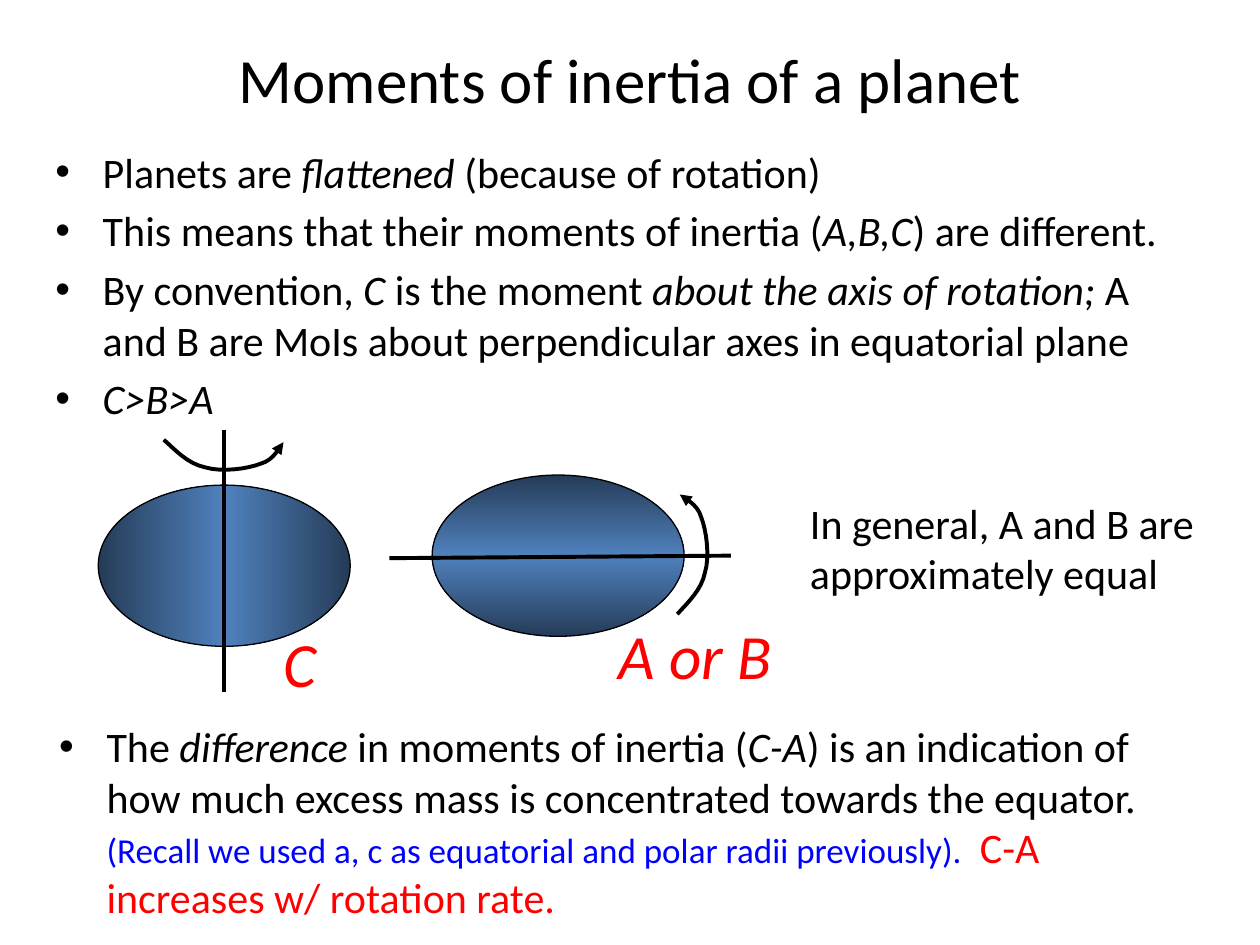
from copy import deepcopy
from dataclasses import dataclass

from lxml import etree
from pptx import Presentation
from pptx.dml.color import RGBColor
from pptx.enum import shapes, text
from pptx.oxml.ns import qn
from pptx.util import Inches, Pt


@dataclass(frozen=True)
class Theme:
    font: str = "Calibri"
    black: RGBColor = RGBColor(0, 0, 0)
    red: RGBColor = RGBColor(0xFF, 0, 0)
    blue: RGBColor = RGBColor(0, 0, 0xFF)
    planet_edge: RGBColor = RGBColor(0x25, 0x3C, 0x58)
    planet_middle: RGBColor = RGBColor(0x4F, 0x81, 0xBD)
    large: Pt = Pt(36)
    body: Pt = Pt(24)
    small: Pt = Pt(20)
    outline: Pt = Pt(0.75)
    axis: Pt = Pt(2.25)


THEME = Theme()
ITALIC = {"italic": True}
PLANET_SIZE = (2, 1.28)

BULLETS = [
    [("Planets are ", {}), ("flattened", ITALIC), (" (because of rotation)", {})],
    [("This means that their moments of inertia (", {}), ("A,B,C", ITALIC),
     (") are different.", {})],
    [("By convention, ", {}), ("C ", ITALIC), ("is the moment ", {}),
     ("about the axis of rotation;", ITALIC),
     (" A and B are MoIs about perpendicular axes in equatorial plane", {})],
    [("C>B>A", ITALIC)],
]
CONCLUSION = [
    [("The ", {}), ("difference", ITALIC), (" in moments of inertia (", {}),
     ("C-A", ITALIC),
     (") is an indication of how much excess mass is concentrated"
      " towards the equator.  ", {}),
     ("(Recall we used a, c as equatorial and polar radii previously). ",
      {"size": THEME.small, "color": THEME.blue}),
     (" ", {}),
     ("C-A increases w/ rotation rate.", {"color": THEME.red})],
]

# Cubic curves of the rotation arrow, in inches from its top left corner
ARROW_CURVES = [
    [(0, 0), (0.1, 0.09), (0.19, 0.19), (0.33, 0.22)],
    [(0.33, 0.22), (0.46, 0.26), (0.67, 0.23), (0.77, 0.19)],
    [(0.77, 0.19), (0.88, 0.16), (0.92, 0.05), (0.95, 0.02)],
]


def place(shape, left, top, width, height):
    shape.left, shape.top = Inches(left), Inches(top)
    shape.width, shape.height = Inches(width), Inches(height)


def style_font(font, size, color, italic=None):
    font.name, font.size, font.italic = THEME.font, size, italic
    font.color.rgb = color


def fill_title(title, words, box):
    place(title, *box)
    title.text_frame.text = words
    style_font(title.text_frame.paragraphs[0].font, THEME.large, THEME.black)


def fill_bullets(placeholder, paragraphs, box):
    """Write lists of (words, run format) pairs as bulleted paragraphs."""
    place(placeholder, *box)
    frame = placeholder.text_frame
    frame.auto_size = text.MSO_AUTO_SIZE.NONE
    for index, runs in enumerate(paragraphs):
        paragraph = frame.add_paragraph() if index else frame.paragraphs[0]
        for words, style in runs:
            run = paragraph.add_run()
            run.text = words
            style_font(run.font, **{"size": THEME.body, "color": THEME.black, **style})


def add_label(slide, words, box, size, color, italic=None, wrap=False):
    label = slide.shapes.add_textbox(*map(Inches, box))
    label.text_frame.word_wrap = wrap
    label.text_frame.auto_size = text.MSO_AUTO_SIZE.SHAPE_TO_FIT_TEXT
    label.text_frame.text = words
    style_font(label.text_frame.paragraphs[0].font, size, color, italic)


def add_planet(slide, left, top, angle):
    """Add an ellipse shaded from dark edges to a bright middle."""
    planet = slide.shapes.add_shape(
        shapes.MSO_SHAPE.OVAL, *map(Inches, (left, top, *PLANET_SIZE)))
    planet.shadow.inherit = False
    planet.fill.gradient()
    planet.fill.gradient_angle = angle
    stop_list = planet._element.spPr.find(".//" + qn("a:gsLst"))
    stop_list.insert(1, deepcopy(stop_list[0]))
    colors = (THEME.planet_edge, THEME.planet_middle, THEME.planet_edge)
    for index, (stop, color) in enumerate(zip(planet.fill.gradient_stops, colors)):
        stop.position = index / 2
        stop.color.rgb = color
    planet.line.color.rgb = THEME.black
    planet.line.width = THEME.outline


def add_axis(slide, start, end):
    axis = slide.shapes.add_connector(
        shapes.MSO_CONNECTOR.STRAIGHT, *map(Inches, (*start, *end)))
    axis.line.color.rgb = THEME.black
    axis.line.width = THEME.axis
    etree.SubElement(axis._element.spPr, qn("a:effectLst"))


def curve_point(curve, t):
    weights = ((1 - t) ** 3, 3 * t * (1 - t) ** 2, 3 * t ** 2 * (1 - t), t ** 3)
    return tuple(sum(w * v for w, v in zip(weights, values)) for values in zip(*curve))


def add_rotation_arrow(slide, left, top, rotation=0, steps=8):
    points = [curve_point(curve, step / steps)
              for curve in ARROW_CURVES for step in range(1, steps + 1)]
    builder = slide.shapes.build_freeform(Inches(left), Inches(top))
    builder.add_line_segments(
        [(Inches(left + x), Inches(top + y)) for x, y in points], close=False)
    arrow = builder.convert_to_shape()
    arrow.rotation = rotation
    arrow.shadow.inherit = False
    arrow.fill.background()
    arrow.line.color.rgb = THEME.black
    arrow.line.width = THEME.axis
    etree.SubElement(arrow._element.spPr.find(qn("a:ln")), qn("a:tailEnd"),
                     type="triangle")


def main():
    presentation = Presentation()
    presentation.slide_width, presentation.slide_height = Inches(10), Inches(7.5)
    slide = presentation.slides.add_slide(
        presentation.slide_layouts.get_by_name("Two Content"))
    title, bullets, conclusion = slide.placeholders

    fill_title(title, "Moments of inertia of a planet", (0.5, 0, 9, 1.25))
    fill_bullets(bullets, BULLETS, (0.34, 1.11, 9.28, 2.23))
    fill_bullets(conclusion, CONCLUSION, (0.37, 5.67, 9.28, 1.83))

    add_planet(slide, 0.78, 3.85, angle=0)
    add_axis(slide, (1.78, 3.41), (1.78, 5.49))
    add_rotation_arrow(slide, 1.3, 3.49)
    add_label(slide, "C", (2.15, 4.91, 0.53, 0.7), THEME.large, THEME.red, italic=True)

    add_planet(slide, 3.43, 3.77, angle=90)
    add_axis(slide, (5.8, 4.41), (3.09, 4.43))
    add_rotation_arrow(slide, 5.02, 4.28, rotation=270)
    add_label(slide, "A or B", (4.81, 4.84, 1.56, 0.7), THEME.large, THEME.red,
              italic=True)

    add_label(slide, "In general, A and B are approximately equal",
              (6.33, 3.9, 3.52, 0.9), THEME.body, THEME.black, wrap=True)
    presentation.save("out.pptx")


if __name__ == "__main__":
    main()
